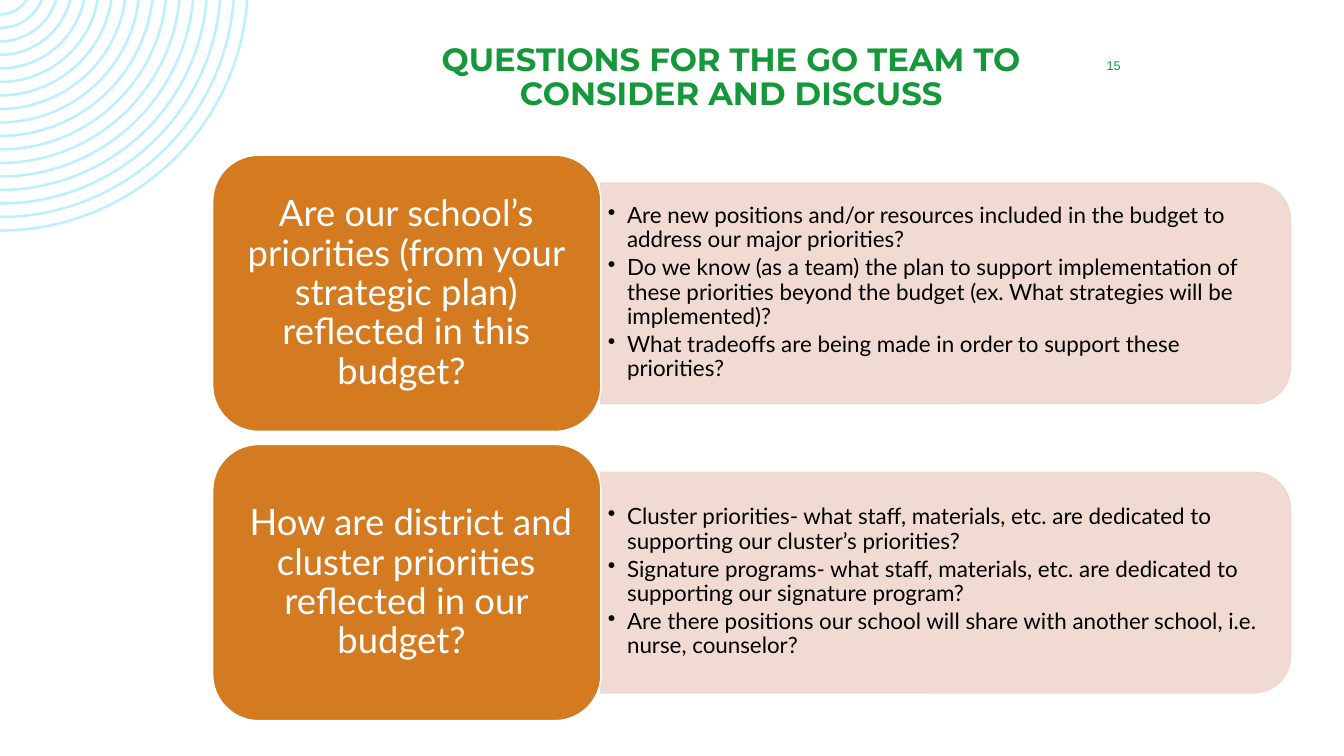
"""Build the slide of budget questions for the GO team."""
from dataclasses import dataclass
from math import asin, cos, pi, sin, tan

from lxml import etree
from pptx import Presentation
from pptx.dml.color import RGBColor
from pptx.enum.shapes import MSO_SHAPE
from pptx.enum.text import MSO_ANCHOR, PP_ALIGN
from pptx.oxml.ns import qn
from pptx.shapes.autoshape import Shape
from pptx.slide import Slide
from pptx.util import Inches, Pt

CENTER, LEFT = PP_ALIGN.CENTER, PP_ALIGN.LEFT
TOP, MIDDLE = MSO_ANCHOR.TOP, MSO_ANCHOR.MIDDLE
ROUNDED, ROUNDED_TOP = MSO_SHAPE.ROUNDED_RECTANGLE, MSO_SHAPE.ROUND_2_SAME_RECTANGLE


@dataclass(frozen=True)
class Style:
    font: str
    size: float
    color: str
    bold: bool = False
    align: int = CENTER
    anchor: int = MIDDLE
    spacing: float = 0.9
    after: float = 0
    inset: tuple[float, float] = (0.1, 0.05)
    bullet: bool = False


@dataclass(frozen=True)
class Theme:
    arcs: str = "BBF0FF"
    card: str = "D47B22"
    panel: str = "EFD7CD"
    outline: str = "FFFFFF"
    title: Style = Style("Montserrat", 23, "159839", bold=True, anchor=TOP)
    number: Style = Style("Arial", 9, "159839", spacing=1, after=6)
    question: Style = Style("Lato", 26, "FFFFFF", inset=(0.11, 0.05))
    detail: Style = Style("Lato", 16, "000000", align=LEFT, after=2.9,
                          inset=(0.07, 0.03), bullet=True)


@dataclass(frozen=True)
class Topic:
    question: str
    details: tuple[str, ...]


THEME = Theme()
TOPICS = (
    Topic(
        "Are our school’s priorities (from your strategic plan) reflected in this budget? ",
        (
            "Are new positions and/or resources included in the budget to address our major priorities?",
            "Do we know (as a team) the plan to support implementation of these priorities beyond "
            "the budget (ex. What strategies will be implemented)?",
            "What tradeoffs are being made in order to support these priorities?",
        ),
    ),
    Topic(
        " How are district and cluster priorities reflected in our budget? ",
        (
            "Cluster priorities- what staff, materials, etc. are dedicated to supporting our cluster’s priorities?",
            "Signature programs- what staff, materials, etc. are dedicated to supporting our signature program?",
            "Are there positions our school will share with another school, i.e. nurse, counselor?",
        ),
    ),
)
FIRST_TOP, PITCH = 1.54, 2.87
CARD_LEFT, CARD_WIDTH, CARD_HEIGHT = 2.11, 3.85, 2.74
PANEL_LEFT, PANEL_WIDTH, PANEL_HEIGHT = 5.96, 6.84, 2.19
RING_COUNT, RING_RADIUS, RING_STEP, RING_WIDTH = 17, 2.47, 0.134, 0.025
RING_CENTER_Y = -0.17


def add_text(page: Slide, left: float, top: float, width: float, height: float,
             texts: tuple[str, ...], style: Style) -> None:
    """Add a text box with one paragraph for each text."""
    box = page.shapes.add_textbox(Inches(left), Inches(top), Inches(width), Inches(height))
    frame = box.text_frame
    frame.word_wrap = True
    frame.vertical_anchor = style.anchor
    frame.margin_left = frame.margin_right = Inches(style.inset[0])
    frame.margin_top = frame.margin_bottom = Inches(style.inset[1])
    for index, text in enumerate(texts):
        para = frame.paragraphs[0] if index == 0 else frame.add_paragraph()
        para.alignment = style.align
        para.line_spacing = style.spacing
        para.space_after = Pt(style.after)
        if style.bullet:
            properties = para._p.get_or_add_pPr()
            properties.set("marL", str(Inches(0.19)))
            properties.set("indent", str(-Inches(0.19)))
            etree.SubElement(properties, qn("a:buChar")).set("char", "•")
        span = para.add_run()
        span.text = text
        span.font.name = style.font
        span.font.size = Pt(style.size)
        span.font.bold = style.bold
        span.font.color.rgb = RGBColor.from_string(style.color)


def paint(shape: Shape, fill: str, line: str | None = None, opacity: int = 100) -> None:
    """Give a shape its fill, outline and opacity."""
    shape.shadow.inherit = False
    shape.fill.solid()
    shape.fill.fore_color.rgb = RGBColor.from_string(fill)
    if line is None:
        shape.line.fill.background()
    else:
        shape.line.width = Pt(1)
        shape.line.color.rgb = RGBColor.from_string(line)
    if opacity < 100:
        for color in shape._element.spPr.iter(qn("a:srgbClr")):
            etree.SubElement(color, qn("a:alpha")).set("val", str(opacity * 1000))


def arc_points(radius: float) -> list[tuple[int, int]]:
    """Return the Bézier points of an arc from the slide's top edge to its left edge."""
    start = asin(-RING_CENTER_Y / radius)
    pull = radius * 4 / 3 * tan((pi / 2 - start) / 4)
    begin_x = radius * cos(start)
    bottom = RING_CENTER_Y + radius
    points = [(begin_x, 0), (begin_x - pull * sin(start), pull * cos(start)),
              (pull, bottom), (0, bottom)]
    return [(Inches(x), Inches(y)) for x, y in points]


def add_rings(page: Slide) -> None:
    """Draw the concentric bands in the top left corner."""
    radii = [RING_RADIUS - RING_STEP * index for index in range(RING_COUNT)]
    bands = [(arc_points(radius), arc_points(radius - RING_WIDTH)[::-1]) for radius in radii]
    builder = page.shapes.build_freeform(*bands[0][0][0])
    for index, (outer, inner) in enumerate(bands):
        if index:
            builder.move_to(*outer[0])
        builder.add_line_segments([outer[3], inner[0], inner[3]], close=True)
    rings = builder.convert_to_shape()
    edges = list(rings._element.iter(qn("a:lnTo")))
    for index, (outer, inner) in enumerate(bands):
        for edge, arc in ((edges[3 * index], outer), (edges[3 * index + 2], inner)):
            edge.tag = qn("a:cubicBezTo")
            for position, (x, y) in enumerate(arc[1:3]):
                point = etree.Element(qn("a:pt"), x=str(x), y=str(y))
                edge.insert(position, point)
    paint(rings, THEME.arcs)


def add_topic(page: Slide, topic: Topic, top: float) -> None:
    """Draw a question card with its panel of details."""
    middle = top + CARD_HEIGHT / 2
    panel = page.shapes.add_shape(
        ROUNDED_TOP,
        Inches(PANEL_LEFT + (PANEL_WIDTH - PANEL_HEIGHT) / 2), Inches(middle - PANEL_WIDTH / 2),
        Inches(PANEL_HEIGHT), Inches(PANEL_WIDTH))
    panel.rotation = 90
    paint(panel, THEME.panel, THEME.panel, opacity=90)
    add_text(page, PANEL_LEFT, top + 0.38, 6.74, 1.97, topic.details, THEME.detail)
    card = page.shapes.add_shape(ROUNDED, Inches(CARD_LEFT), Inches(top),
                                 Inches(CARD_WIDTH), Inches(CARD_HEIGHT))
    paint(card, THEME.card, THEME.outline)
    add_text(page, CARD_LEFT + 0.13, top + 0.14, 3.58, 2.47, (topic.question,), THEME.question)


def main() -> None:
    """Build and save the deck."""
    deck = Presentation()
    deck.slide_width, deck.slide_height = Inches(13.33), Inches(7.5)
    page = deck.slides.add_slide(deck.slide_layouts[6])
    add_rings(page)
    add_text(page, 3.47, 0.38, 7.57, 0.84,
             ("QUESTIONS FOR THE GO TEAM TO CONSIDER AND DISCUSS",), THEME.title)
    add_text(page, 10.64, 0.5, 0.81, 0.3, ("15",), THEME.number)
    for index, topic in enumerate(TOPICS):
        add_topic(page, topic, FIRST_TOP + PITCH * index)
    deck.save("out.pptx")


if __name__ == "__main__":
    main()
